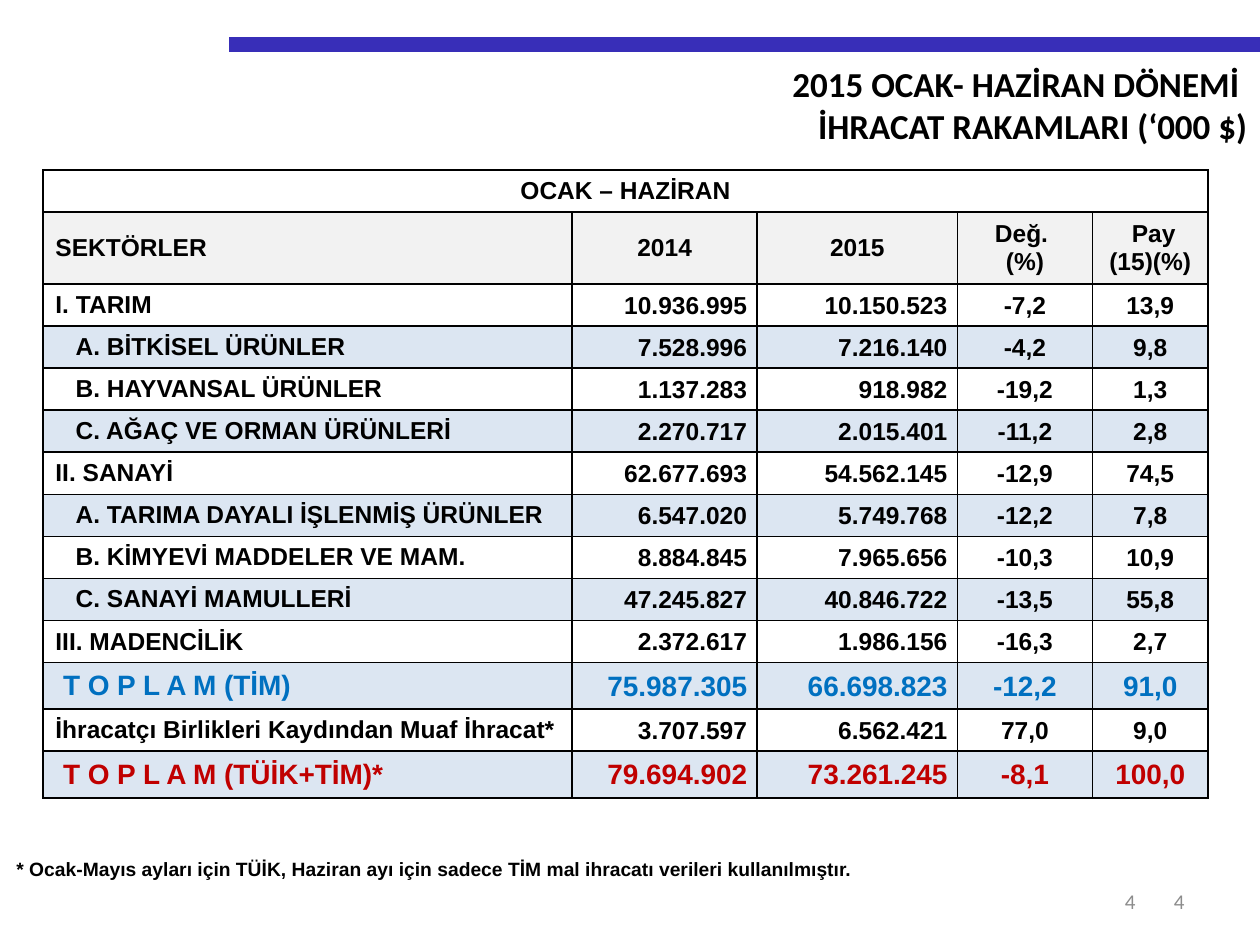
from lxml.etree import SubElement
from pptx import Presentation
from pptx.dml.color import RGBColor
from pptx.enum.shapes import MSO_CONNECTOR
from pptx.enum.text import MSO_ANCHOR, PP_ALIGN
from pptx.oxml import parse_xml
from pptx.oxml.ns import nsdecls, qn
from pptx.util import Inches, Pt

BLACK, GREY, BLUE, RED = "000000", "8C8C8C", "0070C0", "C00000"
WHITE, HEAD, BAND = "FFFFFF", "F2F2F2", "DCE6F2"
LEFT, MID, RIGHT = PP_ALIGN.LEFT, PP_ALIGN.CENTER, PP_ALIGN.RIGHT


def color(code):
    return RGBColor.from_string(code)


def write(frame, text, size, align, name="Arial", shade=BLACK, bold=True):
    """Fill a text frame, one paragraph for each line of text."""
    frame.word_wrap = True
    frame.text = text
    for para in frame.paragraphs:
        para.alignment = align
        para.font.size = Pt(size)
        para.font.name = name
        para.font.bold = bold
        para.font.color.rgb = color(shade)


deck = Presentation()
deck.slide_width, deck.slide_height = Inches(10), Inches(7.5)
slide = deck.slides.add_slide(deck.slide_layouts[6])
shapes = slide.shapes

# Top rule
rule = shapes.add_connector(MSO_CONNECTOR.STRAIGHT, Inches(1.82), Inches(0.35),
                            Inches(10), Inches(0.35))
rule.line.color.rgb = color("382EB8")
rule.line.width = Pt(8.5)
SubElement(rule._element.spPr, qn("a:effectLst"))

# Title and page numbers
title = shapes.add_textbox(Inches(1.06), Inches(0.45), Inches(8.94), Inches(0.77))
write(title.text_frame, "2015 OCAK- HAZİRAN DÖNEMİ \nİHRACAT RAKAMLARI (‘000 $)",
      20, RIGHT, "Calibri")
for left, width in ((7.17, 2.33), (7.01, 2.1)):
    page = shapes.add_textbox(Inches(left), Inches(6.95), Inches(width), Inches(0.4))
    page.text_frame.vertical_anchor = MSO_ANCHOR.MIDDLE
    write(page.text_frame, "4", 12, RIGHT, "Calibri", GREY, False)

# Export table: cells, extra indent of the label, text colour
rows = [
    (["OCAK – HAZİRAN", "", "", "", ""], 0, BLACK),
    (["SEKTÖRLER", "2014", "2015", "Değ. \n(%)", " Pay\n(15)(%)"], 0, BLACK),
    (["I. TARIM", "10.936.995", "10.150.523", "-7,2", "13,9"], 0, BLACK),
    (["A. BİTKİSEL ÜRÜNLER", "7.528.996", "7.216.140", "-4,2", "9,8"], 0.16, BLACK),
    (["B. HAYVANSAL ÜRÜNLER", "1.137.283", "918.982", "-19,2", "1,3"], 0.16, BLACK),
    (["C. AĞAÇ VE ORMAN ÜRÜNLERİ", "2.270.717", "2.015.401", "-11,2", "2,8"], 0.16, BLACK),
    (["II. SANAYİ", "62.677.693", "54.562.145", "-12,9", "74,5"], 0, BLACK),
    (["A. TARIMA DAYALI İŞLENMİŞ ÜRÜNLER", "6.547.020", "5.749.768", "-12,2", "7,8"],
     0.16, BLACK),
    (["B. KİMYEVİ MADDELER VE MAM.", "8.884.845", "7.965.656", "-10,3", "10,9"], 0.16, BLACK),
    (["C. SANAYİ MAMULLERİ", "47.245.827", "40.846.722", "-13,5", "55,8"], 0.16, BLACK),
    (["III. MADENCİLİK", "2.372.617", "1.986.156", "-16,3", "2,7"], 0, BLACK),
    (["T O P L A M (TİM)", "75.987.305", "66.698.823", "-12,2", "91,0"], 0.06, BLUE),
    (["İhracatçı Birlikleri Kaydından Muaf İhracat*", "3.707.597", "6.562.421", "77,0", "9,0"],
     0, BLACK),
    (["T O P L A M (TÜİK+TİM)*", "79.694.902", "73.261.245", "-8,1", "100,0"], 0.06, RED),
]
widths = [4.2, 1.47, 1.59, 1.07, 0.92]
aligns = [LEFT, RIGHT, RIGHT, MID, MID]

grid = shapes.add_table(len(rows), len(widths), Inches(0.34), Inches(1.35),
                        Inches(9.25), Inches(4.97)).table
grid.first_row = grid.horz_banding = False
for col, width in zip(grid.columns, widths):
    col.width = Inches(width)

for r, (texts, indent, shade) in enumerate(rows):
    total = shade != BLACK
    grid.rows[r].height = Inches(0.57 if r == 1 else 0.37 if total else 0.33)
    back = HEAD if r == 1 else BAND if r > 1 and r % 2 else WHITE
    for c, text in enumerate(texts):
        cell = grid.cell(r, c)
        props = cell._tc.get_or_add_tcPr()
        for side in "LRTB":
            props.append(parse_xml(
                f'<a:ln{side} {nsdecls("a")} w="12700"><a:solidFill>'
                f'<a:srgbClr val="{BLACK}"/></a:solidFill></a:ln{side}>'))
        cell.fill.solid()
        cell.fill.fore_color.rgb = color(back)
        cell.vertical_anchor = MSO_ANCHOR.MIDDLE
        if c == 0:
            cell.margin_left = Inches(0.1 + indent)
        elif r > 1:
            cell.margin_left = cell.margin_top = Inches(0.01)
            cell.margin_right = Inches(0.08 if c < 3 else 0.01)
            cell.margin_bottom = 0
        align = MID if r == 0 or (r == 1 and c) else aligns[c]
        write(cell.text_frame, text, 16 if total else 14, align, shade=shade)
grid.cell(0, 0).merge(grid.cell(0, len(widths) - 1))

# Footnote
foot = shapes.add_table(1, 1, Inches(0.12), Inches(6.74), Inches(7.4), Inches(0.31)).table
foot.first_row = foot.horz_banding = False
note = foot.cell(0, 0)
note.fill.background()
note.vertical_anchor = MSO_ANCHOR.MIDDLE
note.margin_left = note.margin_right = note.margin_top = Inches(0.01)
note.margin_bottom = 0
write(note.text_frame, "* Ocak-Mayıs ayları için TÜİK, Haziran ayı için sadece TİM mal "
      "ihracatı verileri kullanılmıştır.", 11, LEFT)

deck.save("out.pptx")
